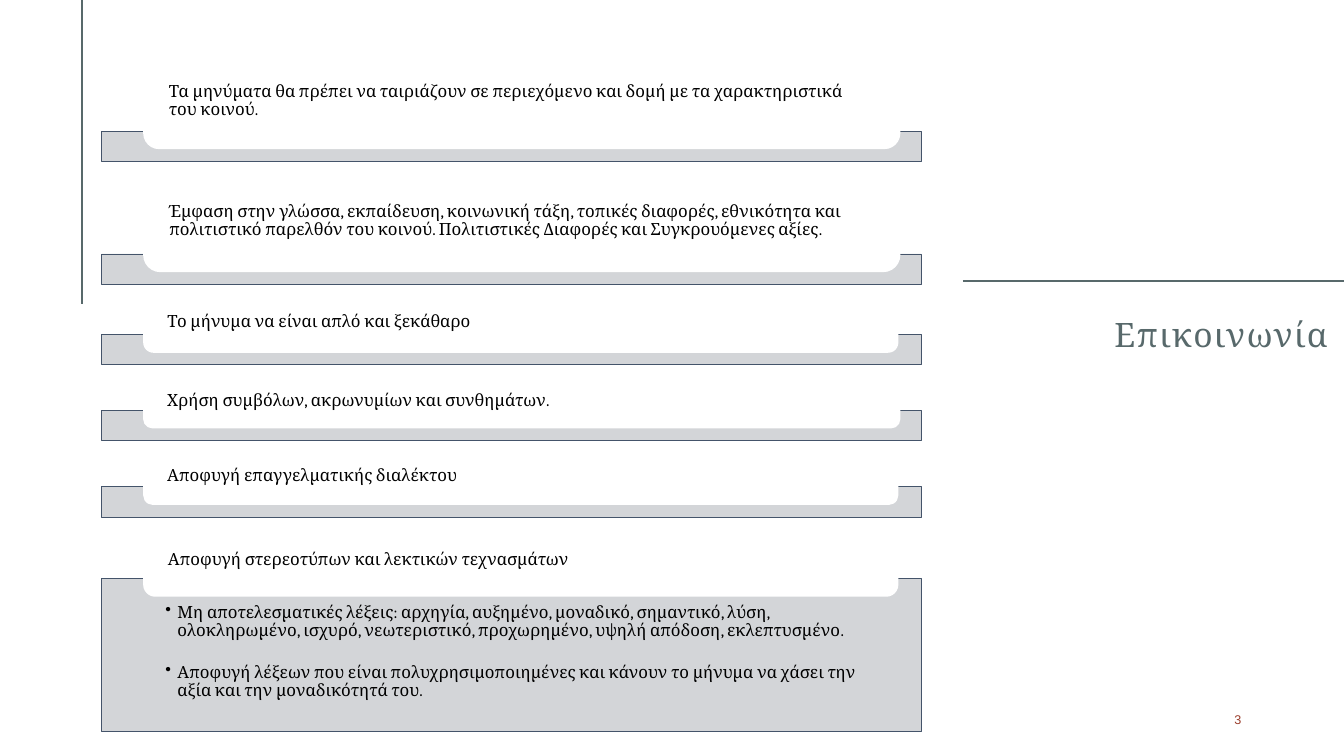
from dataclasses import dataclass
from typing import Any

from lxml import etree
from pptx import Presentation
from pptx.dml.color import RGBColor
from pptx.enum.shapes import MSO_CONNECTOR, MSO_SHAPE
from pptx.enum.text import MSO_ANCHOR, PP_ALIGN
from pptx.oxml.ns import qn
from pptx.util import Pt

RECT = MSO_SHAPE.RECTANGLE
ROUND = MSO_SHAPE.ROUNDED_RECTANGLE
STRAIGHT = MSO_CONNECTOR.STRAIGHT
LEFT, RIGHT = PP_ALIGN.LEFT, PP_ALIGN.RIGHT
TOP, MIDDLE = MSO_ANCHOR.TOP, MSO_ANCHOR.MIDDLE

EMU_PER_PX = 9144
BAR_X, BAR_W, BAR_H = 101, 813, 30
CARD_X, CARD_OVERLAP = 142, 18

CARDS = [
    (130, 95, 751, "Τα μηνύματα θα πρέπει να ταιριάζουν σε περιεχόμενο και δομή "
                   "με τα χαρακτηριστικά του κοινού."),
    (252, 102, 751, "Έμφαση στην γλώσσα, εκπαίδευση, κοινωνική τάξη, τοπικές διαφορές, "
                    "εθνικότητα και πολιτιστικό παρελθόν του κοινού. "
                    "Πολιτιστικές Διαφορές και Συγκρουόμενες αξίες."),
    (332, 61, 749, "Το μήνυμα να είναι απλό και ξεκάθαρο"),
    (407, 55, 751, "Χρήση συμβόλων, ακρωνυμίων και συνθημάτων."),
    (483, 58, 749, "Αποφυγή επαγγελματικής διαλέκτου"),
    (574, 72, 749, "Αποφυγή στερεοτύπων και λεκτικών τεχνασμάτων"),
]
DETAIL_H = 152
DETAILS = [
    "Μη αποτελεσματικές λέξεις: αρχηγία, αυξημένο, μοναδικό, σημαντικό, λύση, "
    "ολοκληρωμένο, ισχυρό, νεωτεριστικό, προχωρημένο, υψηλή απόδοση, εκλεπτυσμένο.",
    "Αποφυγή λέξεων που είναι πολυχρησιμοποιημένες και κάνουν το μήνυμα να χάσει "
    "την αξία και την μοναδικότητά του.",
]


def px(n):
    return n * EMU_PER_PX


def rgb(value):
    return RGBColor.from_string(value)


@dataclass
class Deck:
    s: Any
    font: str = "Cambria"
    ink: str = "000000"
    accent: str = "58696B"
    bar_fill: str = "CFD1D4"
    bar_line: str = "44546A"
    card_fill: str = "FFFFFF"

    def line(self, x1, y1, x2, y2):
        c = self.s.shapes.add_connector(STRAIGHT, px(x1), px(y1), px(x2), px(y2))
        c.line.color.rgb = rgb(self.accent)
        c.line.width = Pt(1.5)
        etree.SubElement(c._element.spPr, qn("a:effectLst"))

    def shape(self, kind, x, y, w, h, fill):
        sp = self.s.shapes.add_shape(kind, px(x), px(y), px(w), px(h))
        sp.shadow.inherit = False
        sp.fill.solid()
        sp.fill.fore_color.rgb = rgb(fill)
        sp.line.fill.background()
        return sp

    def bar(self, y, h):
        sp = self.shape(RECT, BAR_X, y, BAR_W, h, self.bar_fill)
        color = sp._element.spPr.find(qn("a:solidFill"))[0]
        etree.SubElement(color, qn("a:alpha"), val="90000")
        sp.line.color.rgb = rgb(self.bar_line)
        sp.line.width = Pt(0.5)
        return sp

    def card(self, bar_y, h, w, text):
        sp = self.shape(ROUND, CARD_X, bar_y + CARD_OVERLAP - h, w, h, self.card_fill)
        self.frame(sp, MIDDLE, (21, 0, 21, 0))
        self.run(self.para(sp.text_frame.paragraphs[0]), text)

    def frame(self, sp, anchor, insets):
        tf = sp.text_frame
        tf.word_wrap = True
        tf.vertical_anchor = anchor
        tf.margin_left, tf.margin_top, tf.margin_right, tf.margin_bottom = map(px, insets)
        return tf

    def para(self, p, align=LEFT, after=0):
        p.alignment = align
        p.line_spacing = 0.9
        p.space_after = Pt(after)
        return p

    def run(self, p, text, size=12, color=None, font=None, spacing=0):
        r = p.add_run()
        r.text = text
        r.font.size = Pt(size)
        r.font.name = font or self.font
        r.font.color.rgb = rgb(color or self.ink)
        if spacing:
            r._r.get_or_add_rPr().set("spc", str(spacing))

    def bullets(self, sp, items):
        tf = self.frame(sp, TOP, (63, 25, 63, 9))
        for i, text in enumerate(items):
            p = tf.add_paragraph() if i else tf.paragraphs[0]
            self.para(p, after=17)
            pPr = p._p.get_or_add_pPr()
            pPr.set("marL", str(px(12)))
            pPr.set("indent", str(px(-12)))
            etree.SubElement(pPr, qn("a:buChar"), char="•")
            self.run(p, text)

    def label(self, x, y, w, h, text, **style):
        sp = self.s.shapes.add_textbox(px(x), px(y), px(w), px(h))
        tf = self.frame(sp, MIDDLE, (10, 5, 10, 5))
        p = self.para(tf.paragraphs[0], RIGHT)
        self.run(p, text, **style)
        return p


def main():
    prs = Presentation()
    prs.slide_width, prs.slide_height = px(1333), px(750)
    deck = Deck(prs.slides.add_slide(prs.slide_layouts[6]))

    deck.line(81, 0, 81, 302)
    deck.line(955, 279, 1333, 279)
    deck.label(1149, 695, 92, 40, "3", size=9, color="9B3D2B", font="Arial", spacing=150)

    for bar_y, h, w, text in CARDS:
        last = text == CARDS[-1][-1]
        bar = deck.bar(bar_y, DETAIL_H if last else BAR_H)
        if last:
            deck.bullets(bar, DETAILS)
        deck.card(bar_y, h, w, text)

    title = deck.label(742, 322, 586, 54, "Επικοινωνία", size=24, color=deck.accent, spacing=100)
    title.add_line_break()
    deck.run(title, "", size=24)
    prs.save("out.pptx")


if __name__ == "__main__":
    main()
